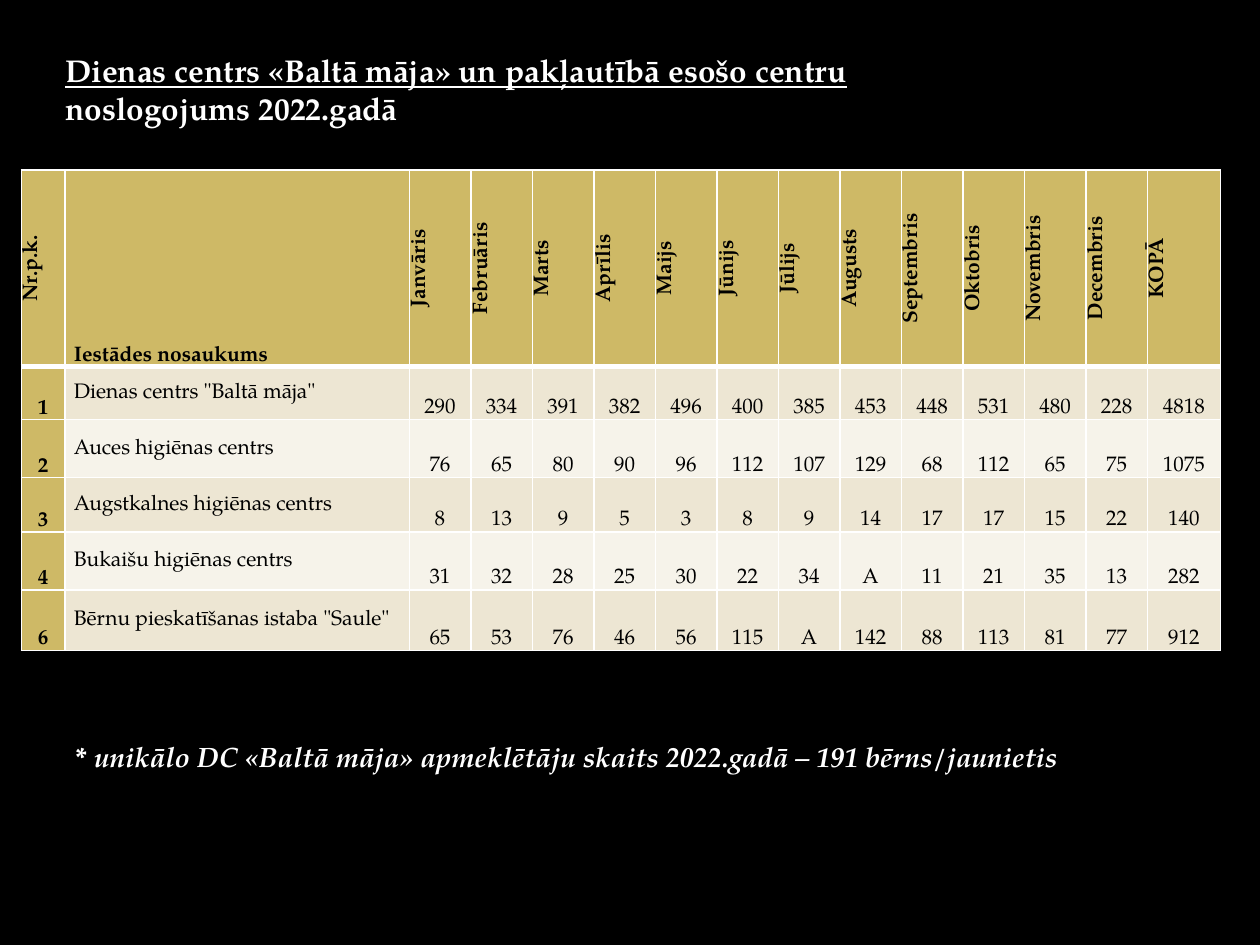
from dataclasses import dataclass

import lxml.etree
import pptx
import pptx.dml.color
import pptx.enum.text
import pptx.oxml.ns
import pptx.util

Cm = pptx.util.Cm
Pt = pptx.util.Pt
Align = pptx.enum.text.PP_ALIGN
Anchor = pptx.enum.text.MSO_ANCHOR

FONT = "TeX Gyre Pagella"
BLACK, WHITE = "000000", "FFFFFF"
GOLD, SAND, CREAM = "CEB966", "EDE6D3", "F6F3EA"


@dataclass
class Span:
    text: str
    size: float
    color: str = WHITE
    bold: bool = True
    italic: bool = False
    underline: bool = False


@dataclass
class TextBlock:
    left: float
    top: float
    bottom_inset: float
    spans: list[Span]  # one paragraph each


@dataclass
class CellStyle:
    fill: str
    bold: bool = False
    align: Align = Align.CENTER
    anchor: Anchor = Anchor.BOTTOM
    rotated: bool = False
    top_line: float = 1
    bottom_line: float = 1


@dataclass
class Center:
    number: str
    name: str
    visits: str  # twelve months, then the total
    height: float


MONTHS = ("Janvāris Februāris Marts Aprīlis Maijs Jūnijs Jūlijs Augusts "
          "Septembris Oktobris Novembris Decembris").split()
HEADINGS = ["Nr.p.k.", "Iestādes nosaukums", *MONTHS, "KOPĀ"]
COLUMN_WIDTHS = [0.88, 6.94] + [1.24] * len(MONTHS) + [1.47]
HEADING_HEIGHT = 3.96

CENTERS = [
    Center("1", 'Dienas centrs "Baltā māja"',
           "290 334 391 382 496 400 385 453 448 531 480 228 4818", 1.07),
    Center("2", "Auces higiēnas centrs",
           "76 65 80 90 96 112 107 129 68 112 65 75 1075", 1.17),
    Center("3", "Augstkalnes higiēnas centrs",
           "8 13 9 5 3 8 9 14 17 17 15 22 140", 1.09),
    Center("4", "Bukaišu higiēnas centrs",
           "31 32 28 25 30 22 34 A 11 21 35 13 282", 1.17),
    Center("6", 'Bērnu pieskatīšanas istaba "Saule"',
           "65 53 76 46 56 115 A 142 88 113 81 77 912", 1.22),
]

TITLE = TextBlock(1.07, 0.86, 0.81, [
    Span("Dienas centrs «Baltā māja» un pakļautībā esošo centru", 18, underline=True),
    Span("noslogojums 2022.gadā", 18),
])
FOOTNOTE = TextBlock(1.27, 13.97, 0.13, [
    Span("* unikālo DC «Baltā māja» apmeklētāju skaits 2022.gadā – 191 bērns/jaunietis",
         16, italic=True),
])


def rgb(color: str) -> pptx.dml.color.RGBColor:
    return pptx.dml.color.RGBColor.from_string(color)


def add_span(para, span: Span) -> None:
    run = para.add_run()
    run.text = span.text
    font = run.font
    font.name, font.size = FONT, Pt(span.size)
    font.bold, font.italic, font.underline = span.bold, span.italic, span.underline
    font.color.rgb = rgb(span.color)


def add_text(page, block: TextBlock) -> None:
    box = page.shapes.add_textbox(Cm(block.left), Cm(block.top), Cm(20.52), Cm(2.54))
    frame = box.text_frame
    frame.word_wrap = True
    frame.vertical_anchor = Anchor.MIDDLE
    frame.margin_bottom = Cm(block.bottom_inset)
    for index, span in enumerate(block.spans):
        para = frame.add_paragraph() if index else frame.paragraphs[0]
        para.alignment = Align.JUSTIFY
        add_span(para, span)


def add_borders(cell, top: float, bottom: float) -> None:
    properties = cell._tc.get_or_add_tcPr()
    for side, width in (("L", 1), ("R", 1), ("T", top), ("B", bottom)):
        line = lxml.etree.SubElement(properties, pptx.oxml.ns.qn(f"a:ln{side}"), w=str(Pt(width)))
        fill = lxml.etree.SubElement(line, pptx.oxml.ns.qn("a:solidFill"))
        lxml.etree.SubElement(fill, pptx.oxml.ns.qn("a:srgbClr"), val=WHITE)


def fill_cell(cell, text: str, style: CellStyle) -> None:
    add_borders(cell, style.top_line, style.bottom_line)
    cell.fill.solid()
    cell.fill.fore_color.rgb = rgb(style.fill)
    cell.vertical_anchor = style.anchor
    cell.margin_left = cell.margin_right = Cm(0.18)
    cell.margin_top = cell.margin_bottom = Cm(0)
    if style.rotated:
        cell._tc.get_or_add_tcPr().set("vert", "vert270")
    para = cell.text_frame.paragraphs[0]
    para.alignment = style.align
    para.line_spacing = 1.07
    para.space_after = Pt(8)
    add_span(para, Span(text, 12, BLACK, style.bold))


def add_visits_table(page) -> None:
    heights = [HEADING_HEIGHT] + [center.height for center in CENTERS]
    table = page.shapes.add_table(
        len(heights), len(COLUMN_WIDTHS), Cm(0.43), Cm(3.43),
        Cm(sum(COLUMN_WIDTHS)), Cm(sum(heights))).table
    table.first_row = table.horz_banding = False
    for column, width in zip(table.columns, COLUMN_WIDTHS):
        column.width = Cm(width)
    for row, height in zip(table.rows, heights):
        row.height = Cm(height)

    # Heading row: all turned upright except the name column
    for index, heading in enumerate(HEADINGS):
        is_name = index == 1
        fill_cell(table.cell(0, index), heading, CellStyle(
            GOLD, bold=True, align=Align.LEFT if is_name else Align.CENTER,
            rotated=not is_name, bottom_line=3))

    # One banded row for each center
    for row, center in enumerate(CENTERS, start=1):
        band = SAND if row % 2 else CREAM
        top = 3 if row == 1 else 1
        fill_cell(table.cell(row, 0), center.number, CellStyle(GOLD, bold=True, top_line=top))
        fill_cell(table.cell(row, 1), center.name, CellStyle(
            band, align=Align.LEFT, anchor=Anchor.MIDDLE, top_line=top))
        for column, count in enumerate(center.visits.split(), start=2):
            fill_cell(table.cell(row, column), count, CellStyle(band, top_line=top))


def main() -> None:
    deck = pptx.Presentation()
    deck.slide_width, deck.slide_height = Cm(25.4), Cm(19.05)
    page = deck.slides.add_slide(deck.slide_layouts[6])
    page.background.fill.solid()
    page.background.fill.fore_color.rgb = rgb(BLACK)
    add_visits_table(page)
    add_text(page, TITLE)
    add_text(page, FOOTNOTE)
    deck.save("out.pptx")


if __name__ == "__main__":
    main()
